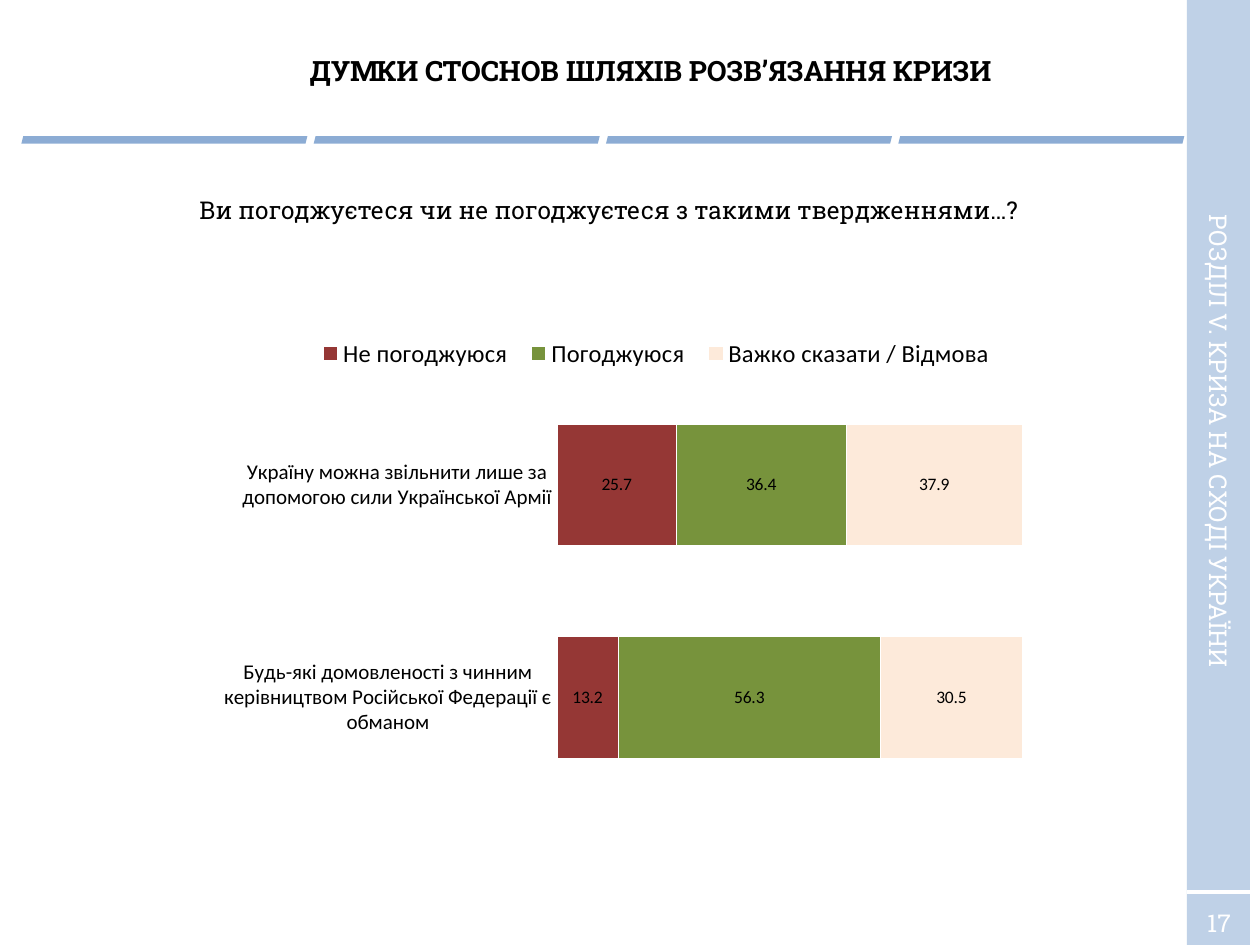
import pptx
import pptx.chart.data
import pptx.dml.color
import pptx.enum.chart
import pptx.enum.shapes
import pptx.enum.text
import pptx.oxml
import pptx.oxml.ns
import pptx.util
from pptx.util import Inches

TITLE = "ДУМКИ СТОСНОВ ШЛЯХІВ РОЗВ’ЯЗАННЯ КРИЗИ"
ASK = "Ви погоджуєтеся чи не погоджуєтеся з такими твердженнями…?"
PART = "РОЗДІЛ V. КРИЗА НА СХОДІ УКРАЇНИ"
PAGE = "17"
CLAIMS = [
    "Будь-які домовленості з чинним керівництвом Російської Федерації є обманом",
    "Україну можна звільнити лише за допомогою сили Української Армії",
]
REPLIES = [
    ("Не погоджуюся", (13.2, 25.7), "953735"),
    ("Погоджуюся", (56.3, 36.4), "77933C"),
    ("Важко сказати / Відмова", (30.5, 37.9), "FDEADA"),
]
THEME = {
    "text": "000000", "light": "FFFFFF", "side": "95B3D7", "dash": "4F81BD",
    "font": "Roboto Slab", "chart": "Calibri",
    "title": 16, "body": 14, "axis": 12, "label": 10,
}
DASHES, DASH_X, DASH_STEP = 4, 0.17, 2.32
PLOT_BOX = (0.406, 0.176, 0.534, 0.789)
KEY_BOX = (0.12, 0.09, 0.8, 0.08)


def tint(hue):
    return pptx.dml.color.RGBColor.from_string(hue)


def style(font, size, hue=THEME["text"], face=THEME["font"], bold=False):
    font.size, font.name, font.bold = pptx.util.Pt(size), face, bold
    font.color.rgb = tint(hue)


def add_text(slide, text, box, size=THEME["body"], hue=THEME["text"],
             bold=False, turn=0, middle=True, wrap=True):
    shape = slide.shapes.add_textbox(*map(Inches, box))
    shape.rotation = turn
    frame = shape.text_frame
    frame.word_wrap = wrap
    anchor = pptx.enum.text.MSO_ANCHOR
    frame.vertical_anchor = anchor.MIDDLE if middle else anchor.TOP
    para = frame.paragraphs[0]
    para.alignment = pptx.enum.text.PP_ALIGN.CENTER
    run = para.add_run()
    run.text = text
    style(run.font, size, hue, bold=bold)


def add_block(slide, kind, box, hue, alpha):
    """Draw a borderless shape whose fill is alpha percent opaque."""
    shape = slide.shapes.add_shape(kind, *map(Inches, box))
    shape.shadow.inherit = False
    shape.fill.solid()
    shape.fill.fore_color.rgb = tint(hue)
    shape.line.fill.background()
    color = shape.fill._xPr.find(".//" + pptx.oxml.ns.qn("a:srgbClr"))
    color.append(pptx.oxml.parse_xml(
        f'<a:alpha {pptx.oxml.ns.nsdecls("a")} val="{alpha * 1000}"/>'))


def add_frame(slide):
    kinds = pptx.enum.shapes.MSO_SHAPE
    add_block(slide, kinds.RECTANGLE, (9.42, 0, 0.5, 7.5), THEME["side"], 60)
    for i in range(DASHES):
        box = (DASH_X + i * DASH_STEP, 1.08, 2.27, 0.06)
        add_block(slide, kinds.PARALLELOGRAM, box, THEME["dash"], 65)
    rule = slide.shapes.add_connector(
        pptx.enum.shapes.MSO_CONNECTOR.STRAIGHT,
        *map(Inches, (9.42, 7.08, 9.92, 7.08)))
    rule.line.color.rgb = tint(THEME["light"])
    rule.line.width = pptx.util.Pt(2)
    rule._element.spPr.append(pptx.oxml.parse_xml(
        f'<a:effectLst {pptx.oxml.ns.nsdecls("a")}/>'))


def set_layout(parent, index, box, inner=False):
    """Fix a chart part in place, in fractions of the chart."""
    for old in parent.findall(pptx.oxml.ns.qn("c:layout")):
        parent.remove(old)
    target = '<c:layoutTarget val="inner"/>' if inner else ""
    modes = "".join(f'<c:{a}Mode val="edge"/>' for a in "xy")
    sizes = "".join(f'<c:{a} val="{v}"/>' for a, v in zip("xywh", box))
    parent.insert(index, pptx.oxml.parse_xml(
        f'<c:layout {pptx.oxml.ns.nsdecls("c")}><c:manualLayout>'
        f'{target}{modes}{sizes}</c:manualLayout></c:layout>'))


def add_bars(slide):
    enums = pptx.enum.chart
    data = pptx.chart.data.CategoryChartData(number_format="0.0")
    data.categories = CLAIMS
    for name, values, _ in REPLIES:
        data.add_series(name, values)
    chart = slide.shapes.add_chart(
        enums.XL_CHART_TYPE.BAR_STACKED_100,
        *map(Inches, (1.61, 2.25, 6.92, 4.28)), data).chart
    face = THEME["chart"]
    style(chart.font, THEME["label"], face=face)
    chart.has_title = False

    chart.has_legend = True
    key = chart.legend
    key.position = enums.XL_LEGEND_POSITION.TOP
    key.include_in_layout = False
    style(key.font, THEME["body"], face=face)
    set_layout(key._element, 1, KEY_BOX)
    set_layout(chart._chartSpace.chart.plotArea, 0, PLOT_BOX, inner=True)

    axis = chart.category_axis
    axis.major_tick_mark = axis.minor_tick_mark = enums.XL_TICK_MARK.NONE
    axis.format.line.fill.background()
    style(axis.tick_labels.font, THEME["axis"], face=face)
    chart.value_axis.has_major_gridlines = False
    chart.value_axis.visible = False

    plot = chart.plots[0]
    plot.gap_width, plot.overlap = 75, 100
    plot.vary_by_categories = False
    for bar, (_, _, hue) in zip(plot.series, REPLIES):
        bar.format.fill.solid()
        bar.format.fill.fore_color.rgb = tint(hue)
        bar.format.line.color.rgb = tint(THEME["light"])
        bar.format.line.width = pptx.util.Pt(0.25)
        labels = bar.data_labels
        labels.show_value = True
        labels.number_format = "0.0"
        labels.number_format_is_linked = False
        style(labels.font, THEME["label"], face=face)


def main():
    deck = pptx.Presentation()
    deck.slide_width, deck.slide_height = Inches(10), Inches(7.5)
    slide = deck.slides.add_slide(deck.slide_layouts[6])
    add_frame(slide)
    add_text(slide, PAGE, (9.38, 7.15, 0.59, 0.34), hue=THEME["light"])
    add_text(slide, ASK, (0.67, 1.33, 8.33, 0.67))
    add_text(slide, TITLE, (1, 0.18, 8.33, 0.75), THEME["title"], bold=True)
    add_bars(slide)
    add_text(slide, PART, (6.92, 3.33, 5.5, 0.34), hue=THEME["light"],
             turn=90, middle=False)
    deck.save("out.pptx")


if __name__ == "__main__":
    main()
